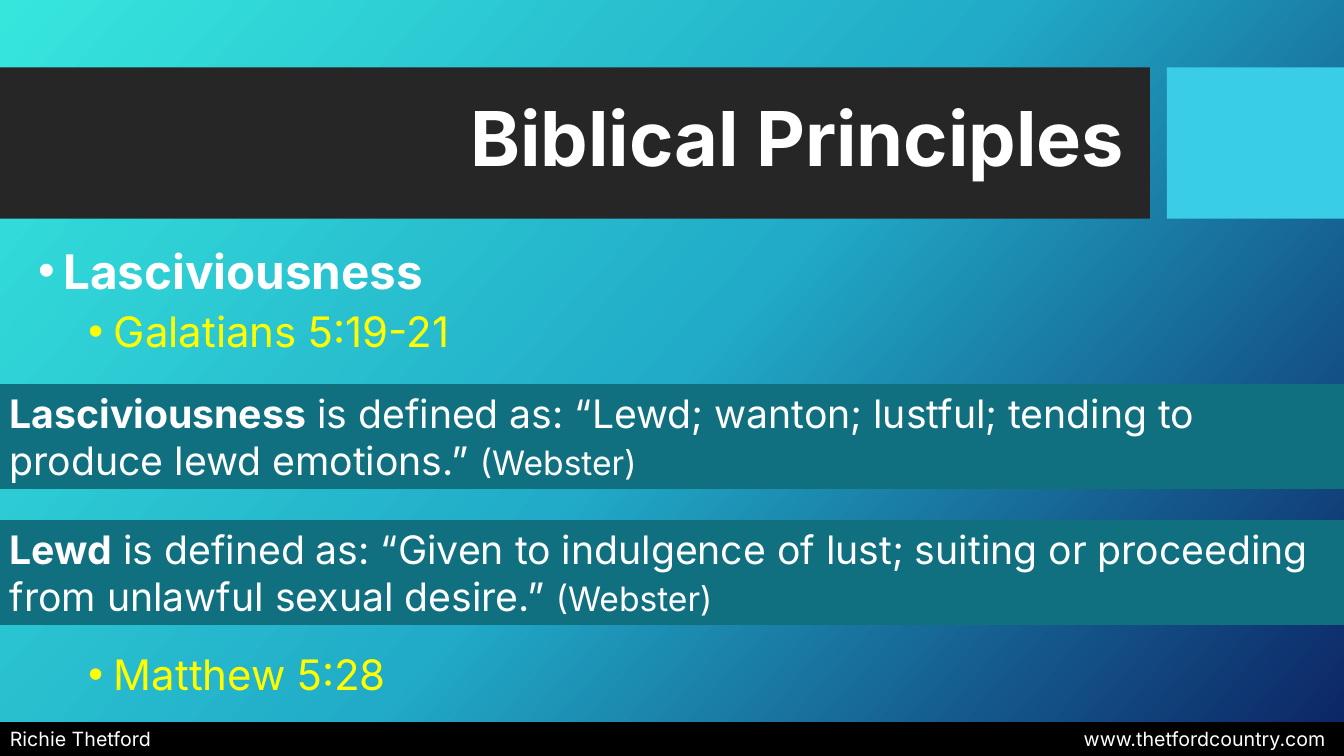
from dataclasses import dataclass

from lxml import etree
from pptx import Presentation
from pptx.dml.color import RGBColor
from pptx.enum.shapes import MSO_SHAPE as SHAPE
from pptx.enum.text import MSO_ANCHOR as ANCHOR, PP_ALIGN as ALIGN
from pptx.oxml.ns import qn
from pptx.util import Cm, Pt

FONT = "Inter"
WHITE, YELLOW, BLACK = "FFFFFF", "FFFF00", "000000"
CHARCOAL, CYAN, TEAL = "262626", "39CDE7", "107080"
SLIDE_W, SLIDE_H = 33.87, 19.05
GRADIENT = [(0, "36E6DD"), (50, "21ABC8"), (100, "0C2263")]


@dataclass
class Box:
    """Position and size in centimetres."""
    left: float
    top: float
    width: float
    height: float

    def lengths(self) -> list:
        return [Cm(v) for v in (self.left, self.top, self.width, self.height)]


@dataclass
class Run:
    text: str
    size: int
    bold: bool = False
    color: str = WHITE


@dataclass
class Bullet:
    run: Run
    indent: float
    before: int = 0


@dataclass
class Definition:
    top: float
    term: str
    meaning: str


BULLETS = [
    Bullet(Run("Lasciviousness", 34, True), 0.64),
    Bullet(Run("Galatians 5:19-21", 30, color=YELLOW), 1.91, 5),
    Bullet(Run("Matthew 5:28", 30, color=YELLOW), 1.91, 209),
]
DEFINITIONS = [
    Definition(9.68, "Lasciviousness",
               " is defined as: “Lewd; wanton; lustful; tending to produce lewd emotions.” "),
    Definition(13.11, "Lewd",
               " is defined as: “Given to indulgence of lust; suiting or proceeding "
               "from unlawful sexual desire.” "),
]


def rgb(color: str) -> RGBColor:
    return RGBColor.from_string(color)


def add_runs(p, runs: list[Run]) -> None:
    for run in runs:
        r = p.add_run()
        r.text = run.text
        r.font.name = FONT
        r.font.size = Pt(run.size)
        r.font.bold = run.bold
        r.font.color.rgb = rgb(run.color)


def add_bar(s, box: Box, color: str, runs: list[Run] | None = None):
    sp = s.shapes.add_shape(SHAPE.RECTANGLE, *box.lengths())
    sp.shadow.inherit = False
    sp.fill.solid()
    sp.fill.fore_color.rgb = rgb(color)
    sp.line.fill.background()
    tf = sp.text_frame
    tf.word_wrap = True
    tf.vertical_anchor = ANCHOR.TOP
    p = tf.paragraphs[0]
    p.alignment = ALIGN.LEFT
    add_runs(p, runs or [])
    return sp


def add_text(s, box: Box):
    tf = s.shapes.add_textbox(*box.lengths()).text_frame
    tf.word_wrap = True
    return tf


def add_bullets(tf, bullets: list[Bullet]) -> None:
    for i, bullet in enumerate(bullets):
        p = tf.add_paragraph() if i else tf.paragraphs[0]
        pPr = p._p.get_or_add_pPr()
        pPr.set("marL", str(Cm(bullet.indent)))
        pPr.set("indent", str(-Cm(0.64)))
        etree.SubElement(pPr, qn("a:buFont")).set("typeface", "Arial")
        etree.SubElement(pPr, qn("a:buChar")).set("char", "•")
        if bullet.before:
            p.space_before = Pt(bullet.before)
        add_runs(p, [bullet.run])


def add_right_tab(p, position: float) -> None:
    tabs = etree.SubElement(p._p.get_or_add_pPr(), qn("a:tabLst"))
    tab = etree.SubElement(tabs, qn("a:tab"))
    tab.set("pos", str(Cm(position)))
    tab.set("algn", "r")


def set_background(s) -> None:
    fill = s.background.fill
    fill.gradient()
    fill.gradient_angle = 360 - 42
    stops = s.element.find(".//" + qn("a:gsLst"))
    for stop in list(stops):
        stops.remove(stop)
    for percent, color in GRADIENT:
        stop = etree.SubElement(stops, qn("a:gs"))
        stop.set("pos", str(percent * 1000))
        etree.SubElement(stop, qn("a:srgbClr")).set("val", color)


def main() -> None:
    prs = Presentation()
    prs.slide_width, prs.slide_height = Cm(SLIDE_W), Cm(SLIDE_H)
    s = prs.slides.add_slide(prs.slide_layouts[6])
    set_background(s)

    # Title band and accent block
    add_bar(s, Box(0, 1.7, 28.98, 3.81), CHARCOAL)
    add_bar(s, Box(29.41, 1.7, 4.46, 3.81), CYAN)
    tf = add_text(s, Box(1.24, 2.08, 27.36, 3))
    tf.vertical_anchor = ANCHOR.MIDDLE
    p = tf.paragraphs[0]
    p.alignment = ALIGN.RIGHT
    p.line_spacing = 0.9
    add_runs(p, [Run("Biblical Principles", 54, True)])

    # Topic and verses
    add_bullets(add_text(s, Box(0.71, 5.97, 29.24, 12.04)), BULLETS)

    # Footer
    footer = add_bar(s, Box(0, 18.2, SLIDE_W, 0.85), BLACK)
    p = footer.text_frame.paragraphs[0]
    add_right_tab(p, 33.16)
    add_runs(p, [Run("Richie Thetford\twww.thetfordcountry.com", 14)])

    # Definitions
    for d in DEFINITIONS:
        add_bar(s, Box(0, d.top, SLIDE_W, 2.64), TEAL,
                [Run(d.term, 28, True), Run(d.meaning, 28), Run("(Webster)", 24)])

    prs.save("out.pptx")


if __name__ == "__main__":
    main()
